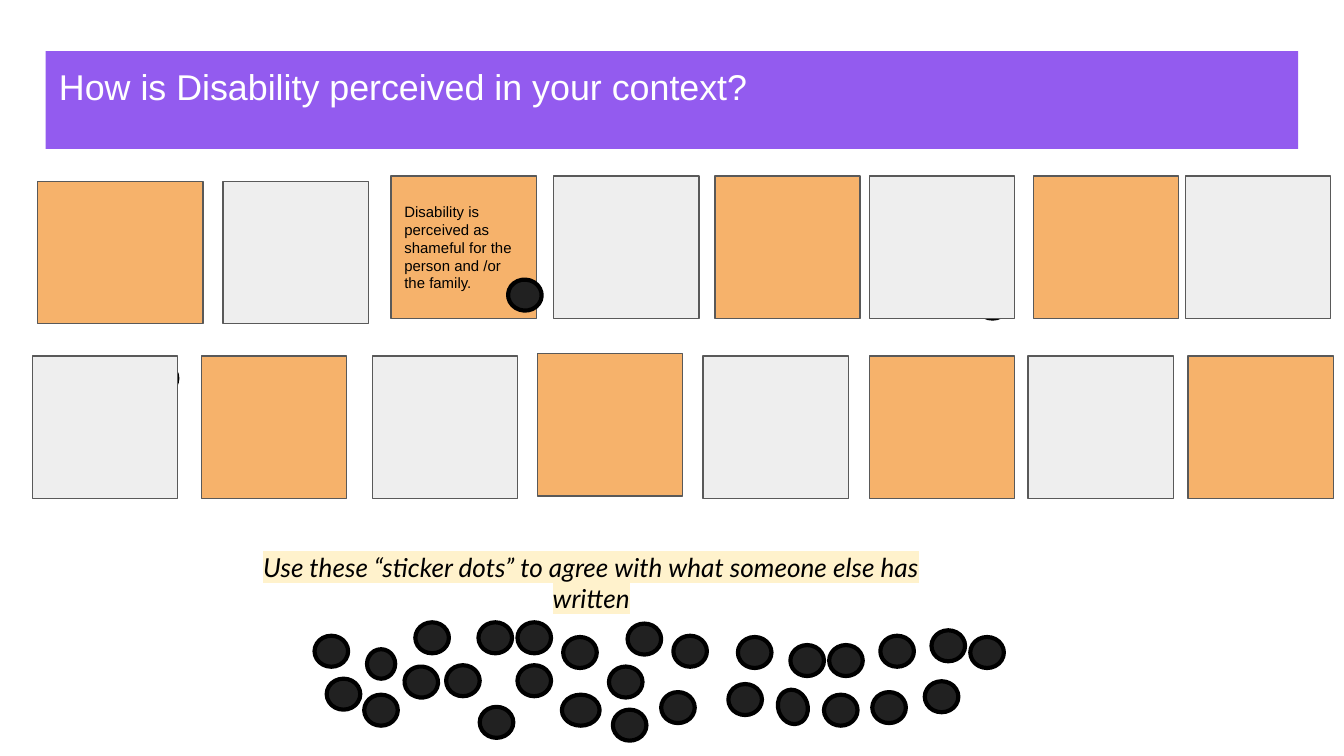
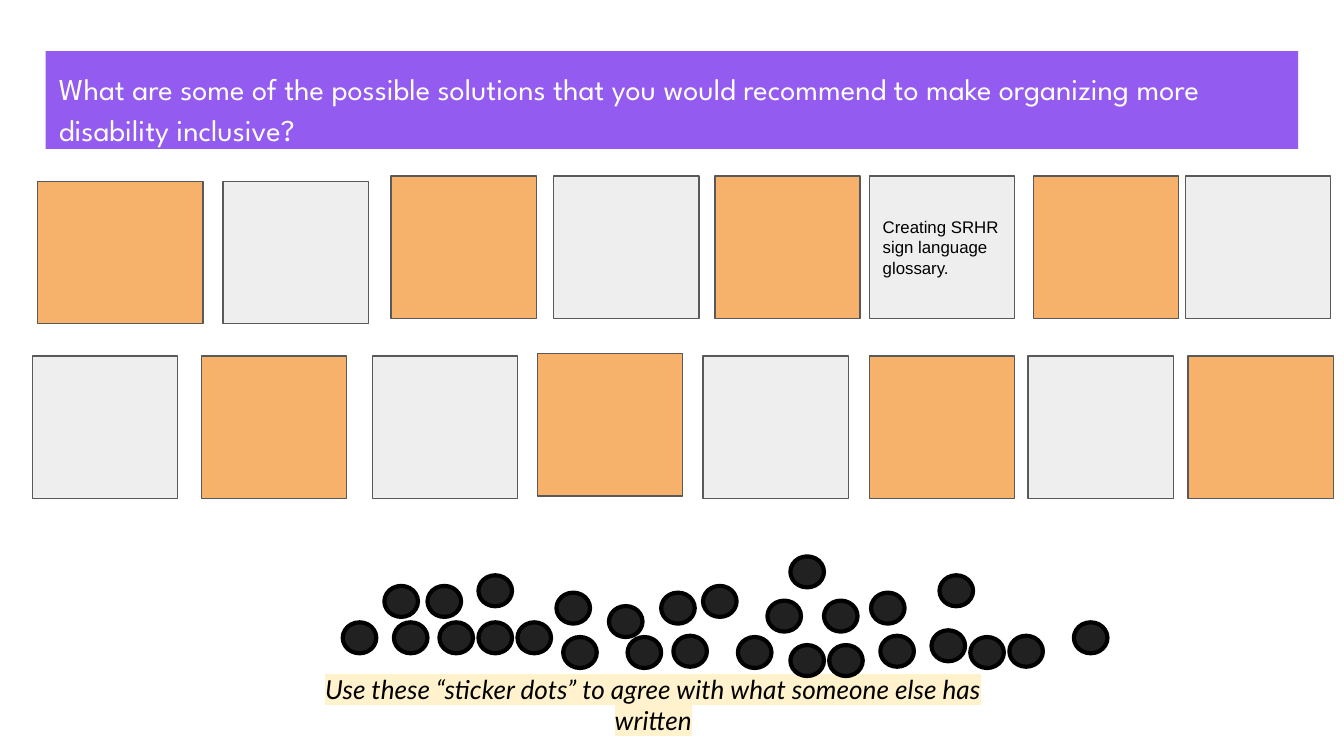
import pptx
import pptx.dml.color
import pptx.enum.shapes
import pptx.enum.text
import pptx.oxml.ns
import pptx.util
from lxml import etree

Pt = pptx.util.Pt
SHAPE = pptx.enum.shapes.MSO_SHAPE
ANCHOR = pptx.enum.text.MSO_ANCHOR
ALIGN = pptx.enum.text.PP_ALIGN

COLORS = {
    "band": "935BEF", "orange": "F6B26B", "grey": "EEEEEE", "edge": "595959",
    "dot": "212121", "black": "000000", "white": "FFFFFF", "marker": "FFF2CC",
}
PROMPT = "Use these “sticker dots” to agree with what someone else has written"

# Sticky notes: left, top; fills alternate along each row
NOTE_W, NOTE_H, WIDE_NOTE_W = 77.8, 76.3, 88.6
NOTE_ROWS = [
    [(20.2, 97.2), (119.5, 97.2), (209.5, 94.3), (296.6, 94.3),
     (383, 94.3), (465.8, 94.3), (553.7, 94.3), (635, 94.3)],
    [(17.3, 190.8), (108, 190.8), (199.4, 190.8), (288, 189.4),
     (376.6, 190.8), (465.8, 190.8), (550.8, 190.8), (636.5, 190.8)],
]

# Sticker dots: left, top and, where they differ, width, height, rotation
COMMON_DOTS = [
    (444.2, 345.6), (301.7, 341.3), (471.6, 340.6), (360.7, 340.6),
    (423.4, 345.6), (277.2, 333.4), (499, 337.7), (256.3, 333.4),
    (395.3, 341.3), (519.8, 341.3),
]
PERCEPTION_DOTS = [
    (390.2, 366.5), (326.2, 357.1), (257, 378.7), (196.6, 347.8, 15.1, 15.8),
    (277.2, 356.4), (168.5, 340.6), (222.5, 333.4), (328.3, 380.2),
    (441.4, 372.2), (336.2, 334.1), (495.4, 365), (467.3, 370.8),
    (239, 356.4), (216.7, 357.1, 18, 16.6, 6.9),
    (272.2, 149.8, 18, 16.6, 4.3), (354.2, 370.8), (195.1, 372.2),
    (415.4, 370.8, 18.7, 15.8, 251.2), (175, 363.6), (301, 372.2, 20.2),
]
TUCKED_DOTS = [(77, 194.4), (522.7, 154.1)]
SOLUTION_DOTS = [
    (423.4, 298.1), (205.9, 313.9), (235.4, 333.4), (326.2, 324.7),
    (229, 313.9), (298.1, 317.5), (211, 333.4), (376.6, 313.9),
    (354.2, 317.5), (256.3, 308.2), (183.6, 333.4), (411.1, 321.8),
    (441.4, 321.8), (336.2, 341.3), (575.3, 333.4), (540.7, 340.6),
    (466.6, 317.5), (503.3, 308.2),
]


def rgb(name):
    return pptx.dml.color.RGBColor.from_string(COLORS[name])


class Board:
    """Holds the style and the current slide."""

    def __init__(self, prs):
        self.prs = prs
        self.slide = None

    def new_slide(self):
        self.slide = self.prs.slides.add_slide(self.prs.slide_layouts[6])

    def shape(self, kind, x, y, w, h, fill, line=None, width=0.75):
        sp = self.slide.shapes.add_shape(kind, Pt(x), Pt(y), Pt(w), Pt(h))
        sp.shadow.inherit = False
        sp.fill.solid()
        sp.fill.fore_color.rgb = rgb(fill)
        if line:
            sp.line.color.rgb = rgb(line)
            sp.line.width = Pt(width)
        else:
            sp.line.fill.background()
        return sp

    def text(self, sp, words, size, font="Arial", color="black",
             anchor=ANCHOR.TOP, align=ALIGN.LEFT, spacing=None,
             italic=None, highlight=None):
        tf = sp.text_frame
        tf.word_wrap = True
        tf.vertical_anchor = anchor
        tf.margin_left = tf.margin_right = Pt(7.2)
        tf.margin_top = tf.margin_bottom = Pt(7.2)
        p = tf.paragraphs[0]
        p.alignment = align
        if spacing:
            p.line_spacing = spacing
        r = p.add_run()
        r.text = words
        r.font.size = Pt(size)
        r.font.italic = italic
        r.font.color.rgb = rgb(color)
        if highlight:
            qn = pptx.oxml.ns.qn
            mark = etree.SubElement(r.font._element, qn("a:highlight"))
            etree.SubElement(mark, qn("a:srgbClr"), val=COLORS[highlight])
        r.font.name = font

    def title(self, words, size, font, spacing=None):
        sp = self.shape(SHAPE.RECTANGLE, 24.5, 27.4, 671, 52.4, "band")
        self.text(sp, words, size, font, "white", spacing=spacing)

    def prompt(self, x, y):
        sp = self.slide.shapes.add_textbox(Pt(x), Pt(y), Pt(400.3), Pt(38.9))
        self.text(sp, PROMPT, 14, "Lato", align=ALIGN.CENTER,
                  italic=True, highlight="marker")

    def notes(self, written):
        """Draw both rows; written maps (row, column) to (words, size)."""
        for row, places in enumerate(NOTE_ROWS):
            for col, (x, y) in enumerate(places):
                fill = "grey" if (row + col) % 2 else "orange"
                w = WIDE_NOTE_W if (row, col) == (0, 0) else NOTE_W
                sp = self.shape(SHAPE.RECTANGLE, x, y, w, NOTE_H, fill, "edge")
                if (row, col) in written:
                    words, size = written[row, col]
                    self.text(sp, words, size, anchor=ANCHOR.MIDDLE)

    def dot(self, x, y, w=18, h=16.6, rotation=0):
        sp = self.shape(SHAPE.OVAL, x, y, w, h, "dot", "black", 2.25)
        sp.rotation = rotation

    def dots(self, places):
        for place in places:
            self.dot(*place)


def main():
    prs = pptx.Presentation()
    prs.slide_width, prs.slide_height = Pt(720), Pt(405)
    board = Board(prs)

    # Slide 1: perceptions
    board.new_slide()
    board.title("How is Disability perceived in your context?", 19.2, "Arial")
    board.prompt(116.6, 288)
    board.dots(TUCKED_DOTS)
    board.notes({(0, 2): ("Disability is perceived as shameful for the "
                          "person and /or the family.", 8)})
    board.dots(COMMON_DOTS + PERCEPTION_DOTS)

    # Slide 2: solutions
    board.new_slide()
    board.title("What are some of the possible solutions that you would "
                "recommend to make organizing more disability inclusive?",
                16.2, "League Spartan", 1.15)
    board.prompt(149.8, 353.5)
    board.notes({(0, 5): ("Creating SRHR sign language glossary.", 9)})
    board.dots(COMMON_DOTS + SOLUTION_DOTS)

    prs.save("out.pptx")


if __name__ == "__main__":
    main()
